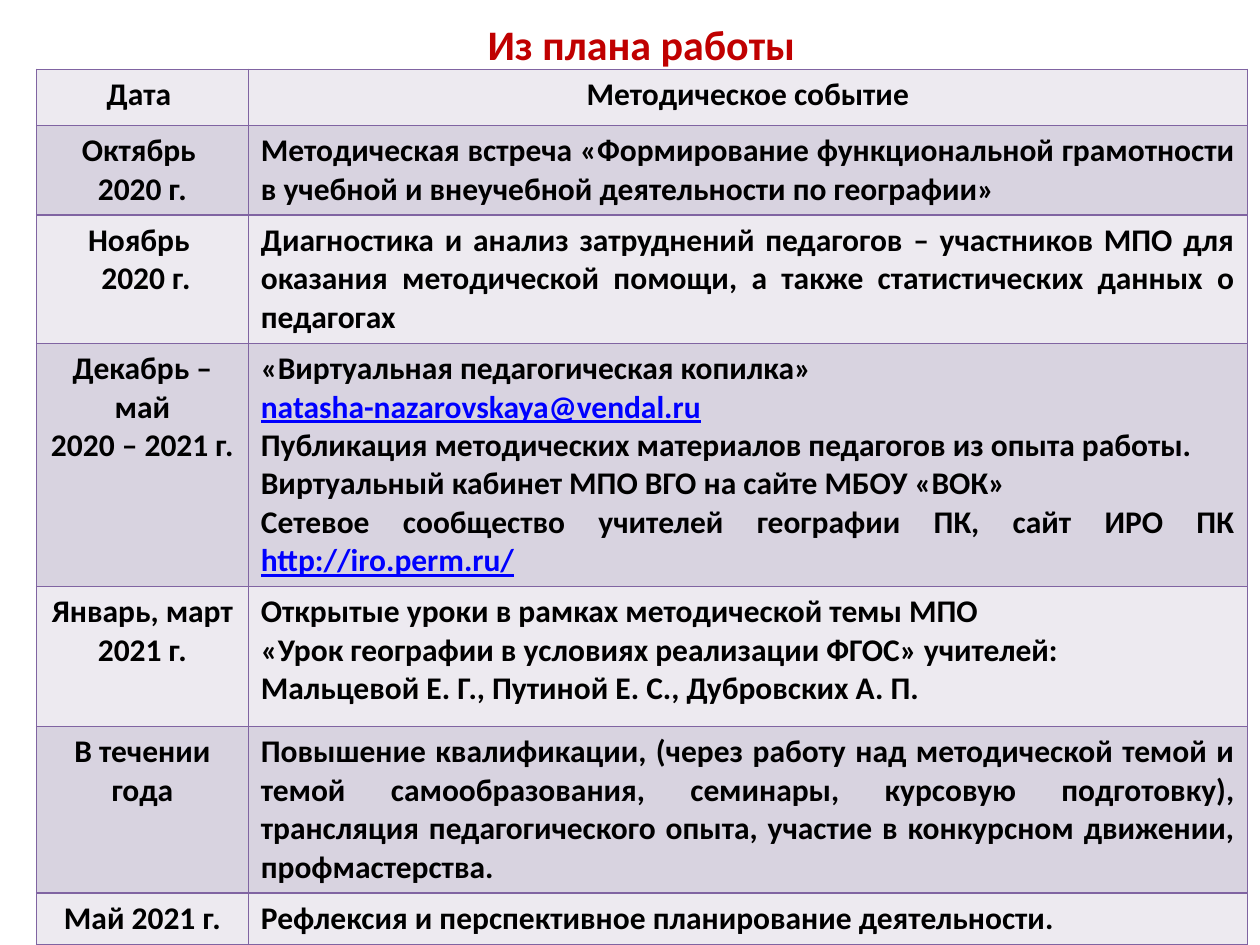
from lxml import etree
from pptx import Presentation
from pptx.dml.color import RGBColor
from pptx.enum.text import MSO_ANCHOR, PP_ALIGN
from pptx.oxml.ns import qn
from pptx.util import Pt

CENTER, JUSTIFY = PP_ALIGN.CENTER, PP_ALIGN.JUSTIFY
BOTTOM = MSO_ANCHOR.BOTTOM

RED = RGBColor(0xC0, 0x00, 0x00)
BLACK = RGBColor(0x00, 0x00, 0x00)
LINK_BLUE = RGBColor(0x00, 0x00, 0xFF)
BORDER_PURPLE = RGBColor(0x80, 0x64, 0xA2)
BANDS = (RGBColor(0xED, 0xEA, 0xF0), RGBColor(0xD8, 0xD3, 0xE0))

FONT = "Calibri"
EMAIL = "natasha-nazarovskaya@vendal.ru"
SITE = "http://iro.perm.ru/"

COLUMN_WIDTHS = (121, 571)
# Row height, date paragraphs, event paragraphs; a tuple is a paragraph of several runs
PLAN = [
    (32, ["Дата "], ["Методическое событие"]),
    (51.4, ["Октябрь ", "2020 г."],
     ["Методическая встреча «Формирование функциональной грамотности "
      "в учебной и внеучебной деятельности по географии»"]),
    (73.2, ["Ноябрь ", " 2020 г."],
     ["Диагностика и анализ затруднений педагогов – участников МПО для "
      "оказания методической помощи, а также статистических данных о педагогах"]),
    (139, ["Декабрь – май", "2020 – 2021 г."],
     ["«Виртуальная педагогическая копилка» ",
      (EMAIL, " "),
      "Публикация методических материалов педагогов из опыта работы.",
      "Виртуальный кабинет МПО ВГО на сайте МБОУ «ВОК»",
      ("Сетевое сообщество учителей географии ПК, сайт ИРО ПК ", SITE, " ")]),
    (80, ["Январь, март ", "2021 г."],
     ["Открытые уроки в рамках методической темы МПО",
      "«Урок географии в условиях реализации ФГОС» учителей:",
      "Мальцевой Е. Г., Путиной Е. С., Дубровских А. П."]),
    (95, ["В течении года"],
     ["Повышение квалификации, (через работу над методической темой и "
      "темой самообразования, семинары, курсовую подготовку), "
      "трансляция педагогического опыта, участие в конкурсном движении, "
      "профмастерства."]),
    (29.4, ["Май 2021 г."],
     ["Рефлексия и перспективное планирование деятельности."]),
]


def write_text(frame, paragraphs, size=18, color=BLACK, align=CENTER):
    for index, content in enumerate(paragraphs):
        paragraph = frame.paragraphs[0] if index == 0 else frame.add_paragraph()
        paragraph.alignment = align
        for words in (content,) if isinstance(content, str) else content:
            run = paragraph.add_run()
            run.text = words
            run.font.name = FONT
            run.font.size = Pt(size)
            run.font.bold = True
            is_address = words in (EMAIL, SITE)
            run.font.color.rgb = LINK_BLUE if is_address else color
            if is_address:
                run.font.underline = True


def add_borders(cell, color, width):
    properties = cell._tc.get_or_add_tcPr()
    for side in ("a:lnL", "a:lnR", "a:lnT", "a:lnB"):
        line = etree.SubElement(properties, qn(side), w=str(Pt(width)))
        fill = etree.SubElement(line, qn("a:solidFill"))
        etree.SubElement(fill, qn("a:srgbClr"), val=str(color))


def place_title(slide, left, top, width, height):
    title = slide.shapes.title
    title.left, title.top = Pt(left), Pt(top)
    title.width, title.height = Pt(width), Pt(height)
    frame = title.text_frame
    frame.vertical_anchor = BOTTOM
    frame.margin_bottom = Pt(8)
    write_text(frame, ["Из плана работы"], size=24, color=RED)


def place_plan(slide, left, top, width, height):
    table = slide.shapes.add_table(len(PLAN), len(COLUMN_WIDTHS), Pt(left),
                                   Pt(top), Pt(width), Pt(height)).table
    for column, column_width in zip(table.columns, COLUMN_WIDTHS):
        column.width = Pt(column_width)
    for index, (row_height, date, event) in enumerate(PLAN):
        row = table.rows[index]
        row.height = Pt(row_height)
        event_align = CENTER if index == 0 else JUSTIFY
        for cell, content, align in zip(row.cells, (date, event),
                                        (CENTER, event_align)):
            add_borders(cell, BORDER_PURPLE, 1)
            cell.fill.solid()
            cell.fill.fore_color.rgb = BANDS[index % 2]
            write_text(cell.text_frame, content, align=align)


def main():
    deck = Presentation()
    deck.slide_width, deck.slide_height = Pt(720), Pt(540)
    slide = deck.slides.add_slide(deck.slide_layouts[5])
    place_title(slide, 42.5, 31.7, 648, 15.8)
    place_plan(slide, 20.9, 39.6, sum(COLUMN_WIDTHS), sum(row[0] for row in PLAN))
    deck.save("out.pptx")


if __name__ == "__main__":
    main()
